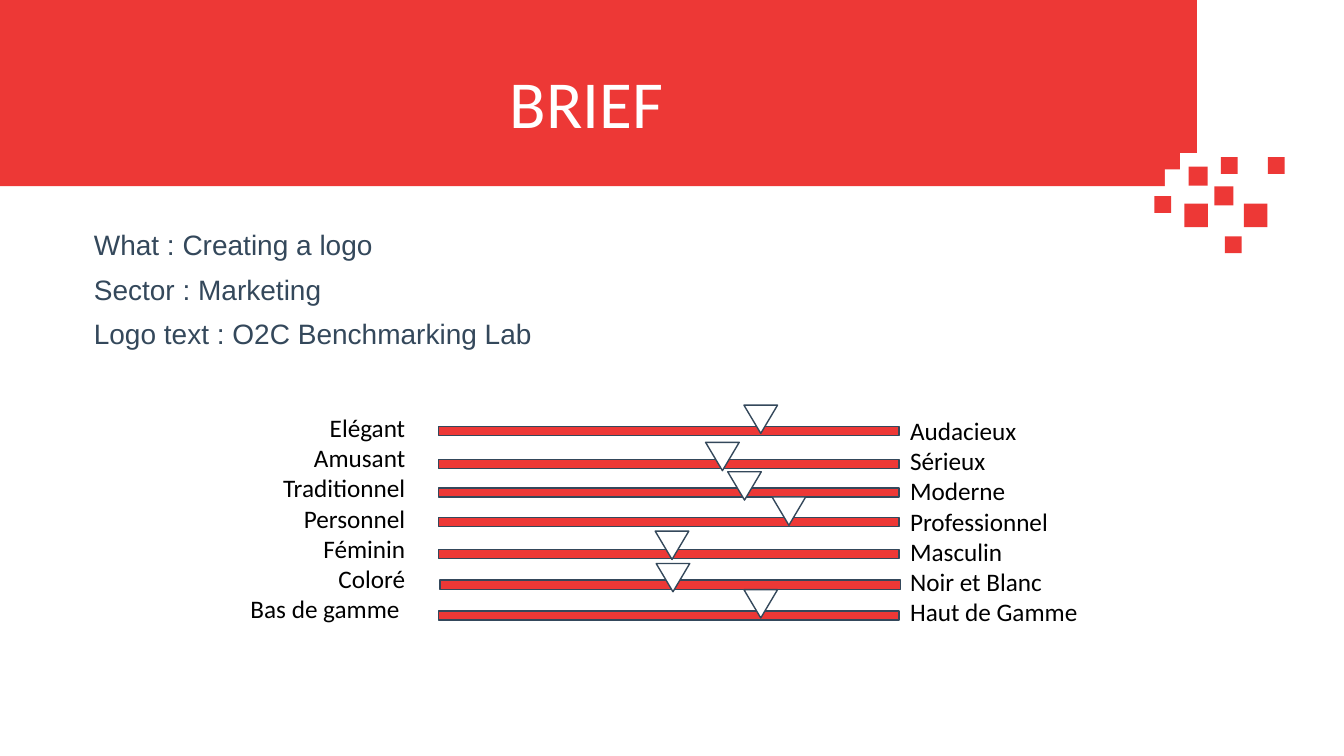
import pptx
import pptx.util
import pptx.oxml
import pptx.dml.color
import pptx.enum.shapes
import pptx.enum.text
from dataclasses import dataclass

Pt = pptx.util.Pt
Kind = pptx.enum.shapes.MSO_SHAPE
Align = pptx.enum.text.PP_ALIGN
Anchor = pptx.enum.text.MSO_ANCHOR
Fit = pptx.enum.text.MSO_AUTO_SIZE


@dataclass(frozen=True)
class Theme:
    red: str = "ED3836"
    navy: str = "34485B"
    white: str = "FFFFFF"
    black: str = "000000"
    head: str = "Calibri"
    body: str = "Arial"
    big: int = 48
    mid: int = 20
    small: int = 18


class Page:
    def __init__(self, deck, theme):
        self.theme = theme
        self.slide = deck.slides.add_slide(deck.slide_layouts[1])

    def shape(self, kind, left, top, width, height, fill, line=None, turn=0):
        item = self.slide.shapes.add_shape(
            kind, Pt(left), Pt(top), Pt(width), Pt(height))
        item.shadow.inherit = False
        item.rotation = turn
        item.fill.solid()
        item.fill.fore_color.rgb = pptx.dml.color.RGBColor.from_string(fill)
        if line:
            item.line.color.rgb = pptx.dml.color.RGBColor.from_string(line)
            item.line.width = Pt(1)
        else:
            item.line.fill.background()

    def letter(self, item, lines, font, size, color, align):
        frame = item.text_frame
        frame.word_wrap = True
        frame.auto_size = Fit.NONE
        frame.text = "\n".join(lines)
        for para in frame.paragraphs:
            para.alignment = align
            para.font.name = font
            para.font.size = Pt(size)
            para.font.color.rgb = pptx.dml.color.RGBColor.from_string(color)
        return frame

    def place(self, item, left, top, width, height):
        item.left, item.top = Pt(left), Pt(top)
        item.width, item.height = Pt(width), Pt(height)
        # Bring the placeholder in front of the shapes drawn so far
        item.element.getparent().append(item.element)

    def title(self, text, *box):
        item = self.slide.shapes.title
        self.place(item, *box)
        look = self.theme
        frame = self.letter(item, [text], look.head, look.big, look.white, Align.CENTER)
        frame.vertical_anchor = Anchor.TOP

    def facts(self, lines, *box):
        item = self.slide.placeholders[1]
        self.place(item, *box)
        look = self.theme
        frame = self.letter(item, lines, look.body, look.mid, look.navy, Align.LEFT)
        frame.vertical_anchor = Anchor.MIDDLE
        frame.margin_top = Pt(24)
        for para in frame.paragraphs:
            para.line_spacing = 0.9
            para.space_before = Pt(10)
            props = para._p.get_or_add_pPr()
            props.set("marL", "0")
            props.set("indent", "0")
            # Bullets off; the tag sits ahead of the default run style
            bullet = pptx.oxml.parse_xml(
                '<a:buNone xmlns:a="http://schemas.openxmlformats.org/drawingml/2006/main"/>')
            props.insert(len(props) - 1, bullet)

    def labels(self, lines, align, *box):
        item = self.slide.shapes.add_textbox(*map(Pt, box))
        look = self.theme
        self.letter(item, lines, look.head, look.small, look.black, align)


def main():
    deck = pptx.Presentation()
    deck.slide_width, deck.slide_height = Pt(960), Pt(540)
    look = Theme()
    page = Page(deck, look)

    # Red band with its two notches, and loose pixels: left, top, side
    page.shape(Kind.RECTANGLE, 0, 0, 855, 133, look.red)
    page.shape(Kind.RECTANGLE, 832, 121, 24, 14, look.white)
    page.shape(Kind.RECTANGLE, 843, 109.4, 16.5, 14, look.white)
    pixels = [(846, 145.4, 16.8), (872, 112.2, 12), (905.6, 112.2, 12),
              (888.5, 145.4, 16.8), (867.5, 133.2, 13.6), (849, 119, 13.6),
              (875, 168.8, 12), (824.6, 140, 12)]
    for left, top, side in pixels:
        page.shape(Kind.RECTANGLE, left, top, side, side, look.red)

    # Title and facts
    page.title("BRIEF", 54.7, 40.3, 728.6, 65.5)
    page.facts(["What : Creating a logo", "Sector : Marketing",
                "Logo text : O2C Benchmarking Lab"], 59.8, 121, 515.5, 153.4)

    # Scales: left word, right word, bar left, bar top, marker left, marker top
    scales = [
        ("Elégant", "Audacieux", 313.2, 304.6, 531.4, 289.4),
        ("Amusant", "Sérieux", 313.2, 328.3, 504, 316),
        ("Traditionnel", "Moderne", 313.2, 348.5, 519.8, 337),
        ("Personnel", "Professionnel", 313.2, 369.6, 551.5, 355),
        ("Féminin", "Masculin", 313.2, 392.4, 468, 379.4),
        ("Coloré", "Noir et Blanc", 314.2, 414.4, 468.7, 402.5),
        ("Bas de gamme ", "Haut de Gamme", 313.2, 436.4, 531.4, 421.2),
    ]
    page.labels([row[0] for row in scales], Align.RIGHT, 66.2, 290.9, 230.4, 160)
    page.labels([row[1] for row in scales], Align.LEFT, 643, 293, 230.4, 160)
    for _, _, left, top, _, _ in scales:
        page.shape(Kind.RECTANGLE, left, top, 329, 6.5, look.red, look.navy)
    for *_, left, top in scales:
        page.shape(Kind.ISOSCELES_TRIANGLE, left, top, 24, 20.2,
                   look.white, look.navy, 180)

    deck.save("out.pptx")


if __name__ == "__main__":
    main()
